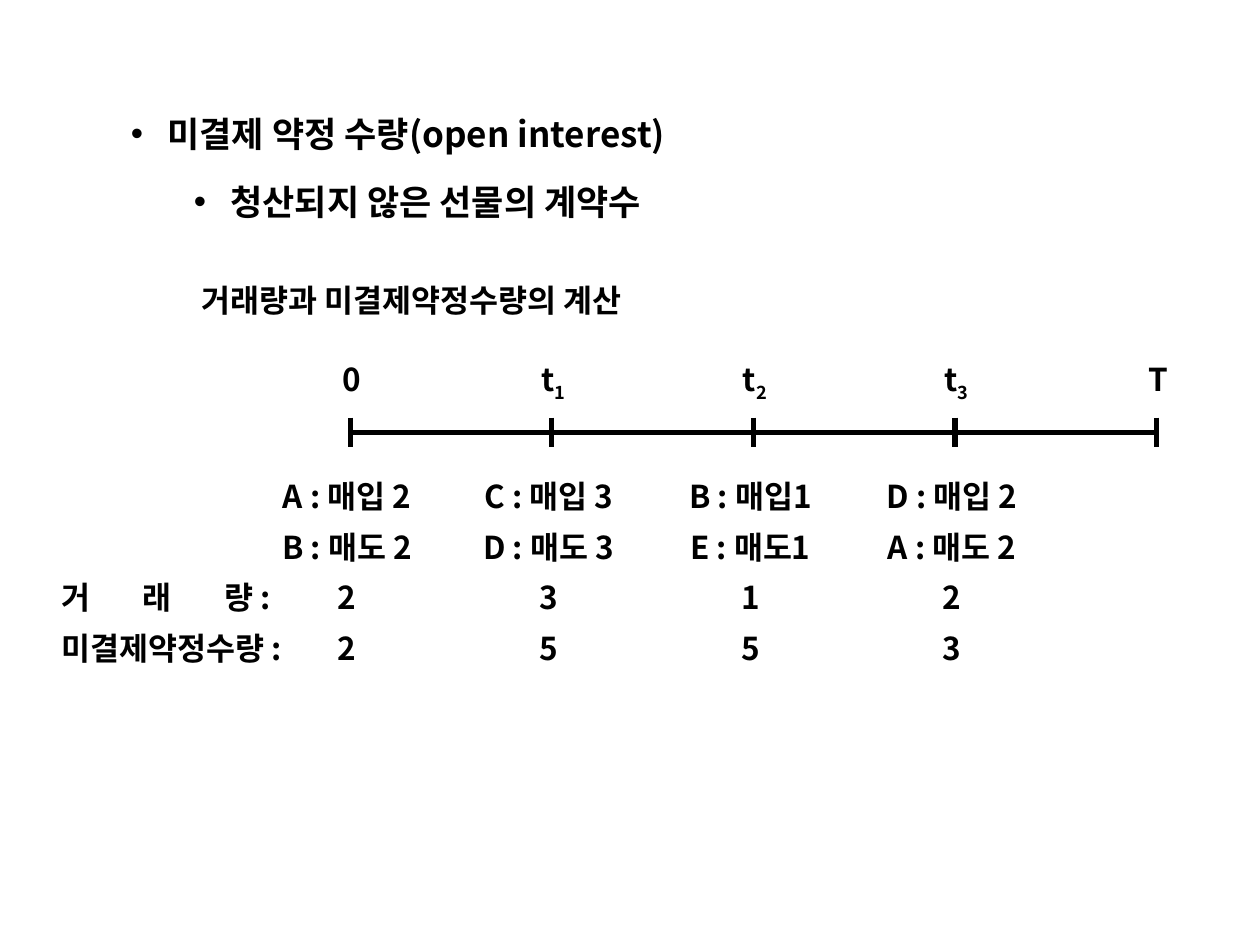
from typing import NamedTuple

from lxml import etree
from pptx import Presentation
from pptx.dml.color import RGBColor
from pptx.enum import shapes, text
from pptx.oxml import ns
from pptx.util import Inches, Pt

INK = RGBColor(0, 0, 0)
FONT = "Noto Sans CJK KR"
BODY_SIZE, BULLET_SIZE = 18, 20
LINE_HEIGHT = 0.4
PERIOD_STEP = 1.6
AXIS_LEFT, AXIS_Y, TICK_HEIGHT = 2.78, 3.43, 0.23
MOMENT_WIDTH, MOMENT_TOP = 1.02, 2.81
TRADE_WIDTH, TRADE_LEFT, TRADE_TOP = 1.51, 2.0, 3.74
LABEL_LEFT, LABEL_WIDTH = 0.39, 2.18


class Moment(NamedTuple):
    symbol: str
    index: str = ""


class Period(NamedTuple):
    buy: str
    sell: str
    volume: str
    open_interest: str


class Bullet(NamedTuple):
    wording: str
    level: int
    margin: float
    space_before: int = 0


MOMENTS = [Moment("0"), Moment("t", "1"), Moment("t", "2"), Moment("t", "3"), Moment("T")]
PERIODS = [
    Period("A : 매입 2", "B : 매도 2", "2", "2"),
    Period("C : 매입 3", "D : 매도 3", "3", "5"),
    Period("B : 매입1", "E : 매도1", "1", "5"),
    Period("D : 매입 2", "A : 매도 2", "2", "3"),
]
BULLETS = [
    Bullet("미결제 약정 수량(open interest)", 2, 1.29),
    Bullet("청산되지 않은 선물의 계약수", 3, 1.79, 15),
]


def add_run(paragraph, wording: str, size: int = BODY_SIZE, baseline: int = 0) -> None:
    run = paragraph.add_run()
    run.text = wording
    run.font.name = FONT
    run.font.size = Pt(size)
    run.font.bold = True
    run.font.color.rgb = INK
    properties = run.font._element
    etree.SubElement(properties, ns.qn("a:ea"), typeface=FONT)
    if baseline:
        properties.set("baseline", str(baseline * 1000))


def add_frame(slide, left: float, top: float, width: float, height: float = LINE_HEIGHT):
    box = slide.shapes.add_textbox(Inches(left), Inches(top), Inches(width), Inches(height))
    box.text_frame.word_wrap = True
    return box.text_frame


def add_label(slide, wording: str, left: float, top: float, width: float,
              centred: bool = False, subscript: str = "", tabs: tuple[float, ...] = ()) -> None:
    paragraph = add_frame(slide, left, top, width).paragraphs[0]
    paragraph.alignment = text.PP_ALIGN.CENTER if centred else text.PP_ALIGN.LEFT
    if tabs:
        stops = etree.SubElement(paragraph._p.get_or_add_pPr(), ns.qn("a:tabLst"))
        for stop in tabs:
            etree.SubElement(stops, ns.qn("a:tab"), pos=str(Inches(stop)), algn="l")
    add_run(paragraph, wording)
    if subscript:
        add_run(paragraph, subscript, baseline=-25)


def add_rule(slide, x1: float, y1: float, x2: float, y2: float) -> None:
    rule = slide.shapes.add_connector(
        shapes.MSO_CONNECTOR.STRAIGHT, Inches(x1), Inches(y1), Inches(x2), Inches(y2))
    rule.line.color.rgb = INK
    rule.line.width = Pt(3)
    etree.SubElement(rule._element.spPr, ns.qn("a:effectLst"))


def add_bullets(slide) -> None:
    frame = add_frame(slide, -0.06, 0.84, 9.53, 0.98)
    for number, bullet in enumerate(BULLETS):
        paragraph = frame.add_paragraph() if number else frame.paragraphs[0]
        paragraph.level = bullet.level
        paragraph.space_before = Pt(bullet.space_before)
        properties = paragraph._p.get_or_add_pPr()
        properties.set("marL", str(Inches(bullet.margin)))
        properties.set("indent", str(Inches(-0.29)))
        etree.SubElement(properties, ns.qn("a:buFont"), typeface="Arial")
        etree.SubElement(properties, ns.qn("a:buChar"), char="•")
        add_run(paragraph, bullet.wording, BULLET_SIZE)


def add_timeline(slide) -> None:
    axis_right = AXIS_LEFT + PERIOD_STEP * (len(MOMENTS) - 1)
    add_rule(slide, AXIS_LEFT, AXIS_Y, axis_right, AXIS_Y)
    for number, moment in enumerate(MOMENTS):
        x = AXIS_LEFT + PERIOD_STEP * number
        add_rule(slide, x, AXIS_Y - TICK_HEIGHT / 2, x, AXIS_Y + TICK_HEIGHT / 2)
        add_label(slide, moment.symbol, x - MOMENT_WIDTH / 2 + 0.01, MOMENT_TOP,
                  MOMENT_WIDTH, True, moment.index)


def add_trades(slide) -> None:
    for column, period in enumerate(PERIODS):
        for row, entry in enumerate(period):
            add_label(slide, entry, TRADE_LEFT + PERIOD_STEP * column,
                      TRADE_TOP + LINE_HEIGHT * row, TRADE_WIDTH, True)
    volume_top = TRADE_TOP + LINE_HEIGHT * 2
    add_label(slide, "거\t래\t량 :", LABEL_LEFT, volume_top, LABEL_WIDTH, tabs=(0.64, 1.29))
    add_label(slide, "미결제약정수량 :", LABEL_LEFT, volume_top + LINE_HEIGHT, LABEL_WIDTH)


def main() -> None:
    deck = Presentation()
    deck.slide_width, deck.slide_height = Inches(10), Inches(7.5)
    slide = deck.slides.add_slide(deck.slide_layouts[6])
    add_bullets(slide)
    add_label(slide, "거래량과 미결제약정수량의 계산", 1.5, 2.18, 8.03)
    add_timeline(slide)
    add_trades(slide)
    deck.save("out.pptx")


if __name__ == "__main__":
    main()
